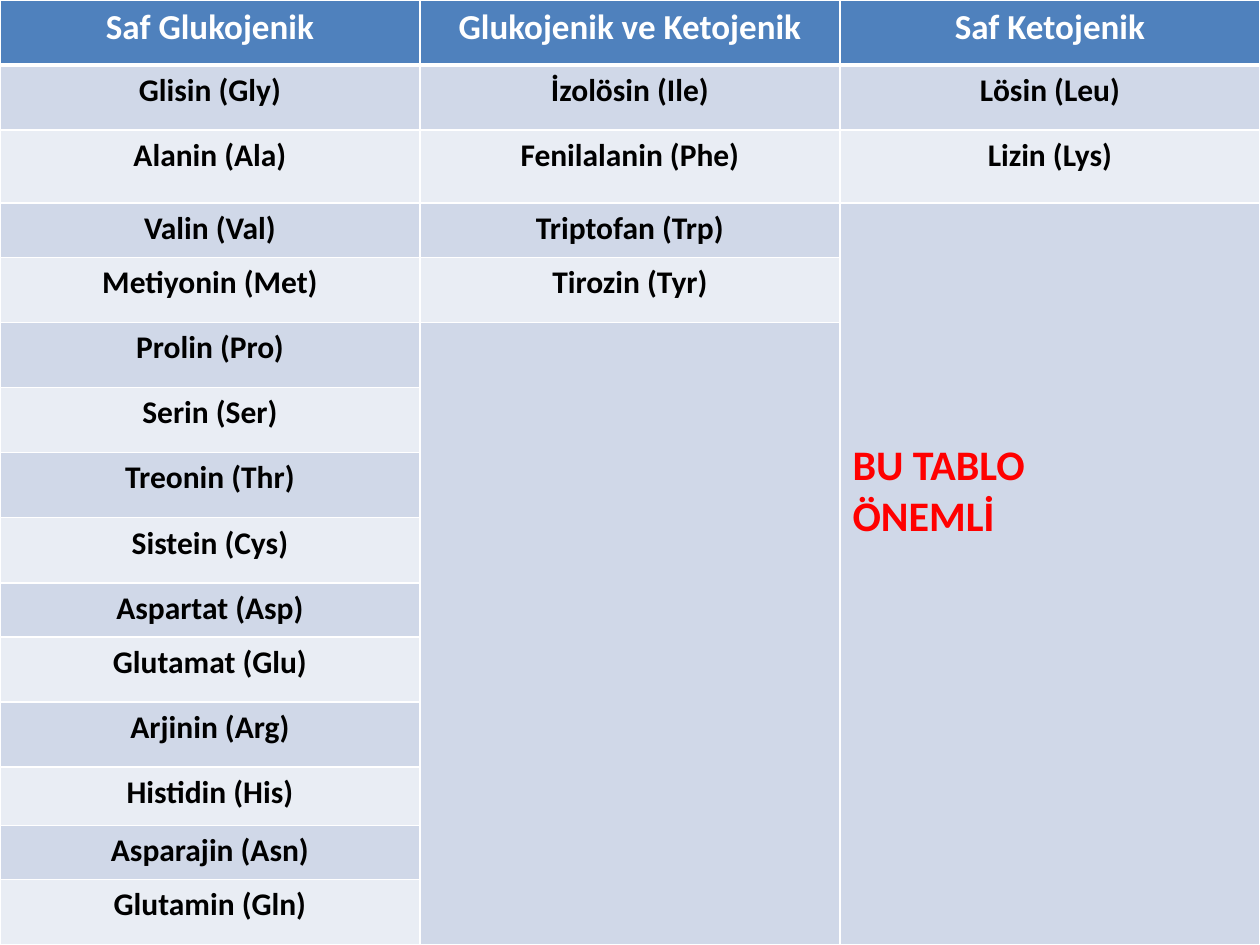
from lxml import etree
from pptx import Presentation
from pptx.dml.color import RGBColor
from pptx.enum.text import PP_ALIGN
from pptx.oxml.ns import qn
from pptx.util import Pt

CENTER, LEFT = PP_ALIGN.CENTER, PP_ALIGN.LEFT
WHITE = RGBColor(0xFF, 0xFF, 0xFF)
BLACK = RGBColor(0x00, 0x00, 0x00)
RED = RGBColor(0xFF, 0x00, 0x00)
BLUE = RGBColor(0x4F, 0x81, 0xBD)
BANDS = (RGBColor(0xE9, 0xED, 0xF4), RGBColor(0xD0, 0xD8, 0xE8))

HEADER_FORMAT = {"name": "Calibri", "size": Pt(20), "bold": True}
BODY_FORMAT = {"name": "Calibri", "size": Pt(18), "bold": True}
NOTE_FORMAT = {"name": "Calibri", "size": Pt(24), "bold": True}

COLUMNS = {
    "Saf Glukojenik": [
        "Glisin (Gly)", "Alanin (Ala)", "Valin (Val)", "Metiyonin (Met)",
        "Prolin (Pro)", "Serin (Ser)", "Treonin (Thr)", "Sistein (Cys)",
        "Aspartat (Asp)", "Glutamat (Glu)", "Arjinin (Arg)",
        "Histidin (His)", "Asparajin (Asn)", "Glutamin (Gln)",
    ],
    "Glukojenik ve Ketojenik": [
        "İzolösin (Ile)", "Fenilalanin (Phe)", "Triptofan (Trp)", "Tirozin (Tyr)",
    ],
    "Saf Ketojenik": ["Lösin (Leu)", "Lizin (Lys)"],
}
NOTE = ["BU TABLO", "ÖNEMLİ"]
ROW_COUNT = 15
ROW_HEIGHT = 37.2
SPECIAL_HEIGHTS = {2: 41.7, 3: 31, 9: 31, 12: 33.3, 13: 31}


def write_cell(cell, lines, formats, color, align):
    """Write one formatted paragraph per line into a cell."""
    frame = cell.text_frame
    for index, line in enumerate(lines):
        para = frame.add_paragraph() if index else frame.paragraphs[0]
        para.alignment = align
        span = para.add_run()
        span.text = line
        for name, value in formats.items():
            setattr(span.font, name, value)
        span.font.color.rgb = color


def set_borders(cell, widths):
    """Give a cell white borders, with widths in points keyed by side."""
    properties = cell._tc.get_or_add_tcPr()
    for position, (side, width) in enumerate(widths.items()):
        line = etree.Element(qn(f"a:ln{side}"), w=str(Pt(width)))
        fill = etree.SubElement(line, qn("a:solidFill"))
        etree.SubElement(fill, qn("a:srgbClr"), val=str(WHITE))
        properties.insert(position, line)


def style_cell(cell, row):
    """Fill and outline a cell according to its row."""
    cell.fill.solid()
    cell.fill.fore_color.rgb = BANDS[row % 2] if row else BLUE
    set_borders(cell, {"L": 1, "R": 1, "T": 3 if row == 1 else 1, "B": 1 if row else 3})


def add_amino_table(page, left, top, width, height):
    """Add the table of amino acids in the given box."""
    table = page.shapes.add_table(
        ROW_COUNT, len(COLUMNS), Pt(left), Pt(top), Pt(width), Pt(height)
    ).table
    for row in range(ROW_COUNT):
        table.rows[row].height = Pt(SPECIAL_HEIGHTS.get(row, ROW_HEIGHT))
    for column, (title, names) in enumerate(COLUMNS.items()):
        table.columns[column].width = Pt(width / len(COLUMNS))
        for row in range(ROW_COUNT):
            style_cell(table.cell(row, column), row)
        write_cell(table.cell(0, column), [title], HEADER_FORMAT, WHITE, CENTER)
        for row, name in enumerate(names, 1):
            write_cell(table.cell(row, column), [name], BODY_FORMAT, BLACK, CENTER)
        first_free = len(names) + 1
        if first_free < ROW_COUNT:
            table.cell(first_free, column).merge(table.cell(ROW_COUNT - 1, column))
    note_cell = table.cell(len(COLUMNS["Saf Ketojenik"]) + 1, 2)
    note_cell.margin_top = Pt(135.6)
    write_cell(note_cell, NOTE, NOTE_FORMAT, RED, LEFT)


def main():
    """Build and save the deck."""
    deck = Presentation()
    deck.slide_width, deck.slide_height = Pt(720), Pt(540)
    page = deck.slides.add_slide(deck.slide_layouts[6])
    add_amino_table(page, 0, 0, 720, 540)
    deck.save("out.pptx")


if __name__ == "__main__":
    main()
